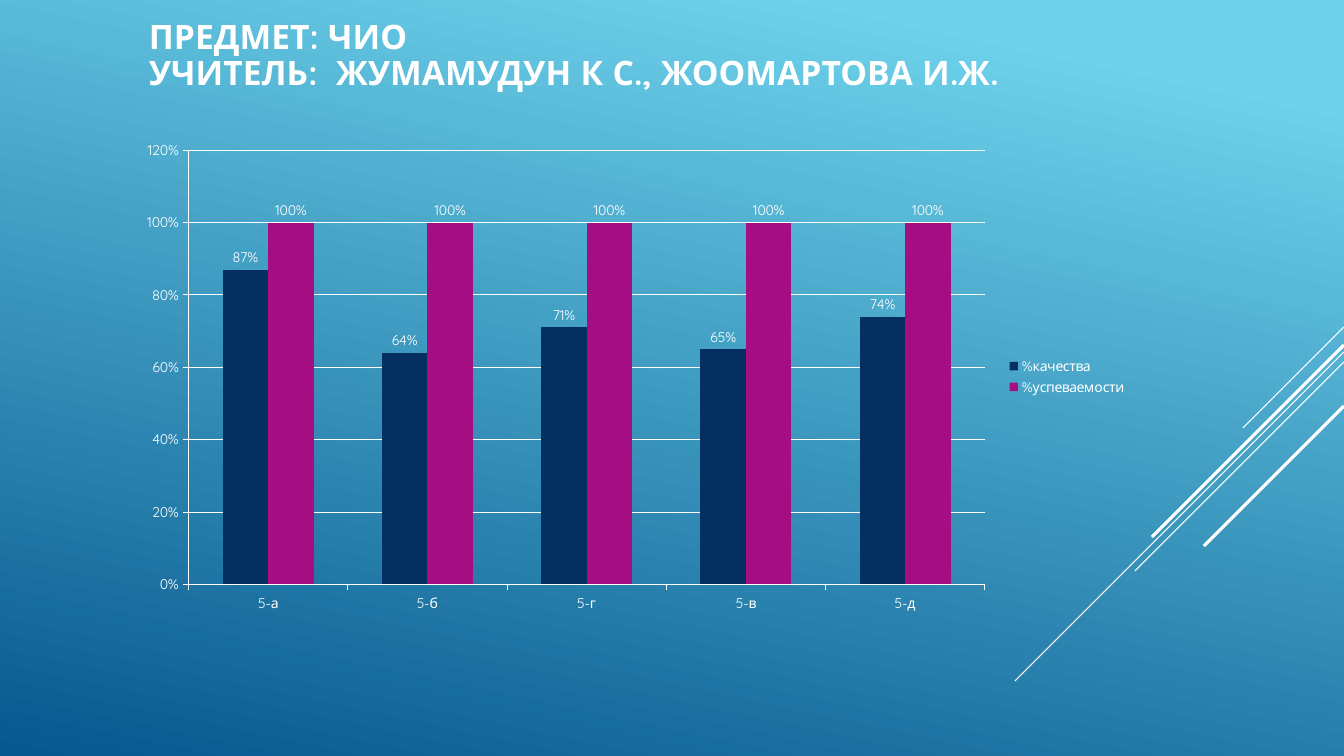
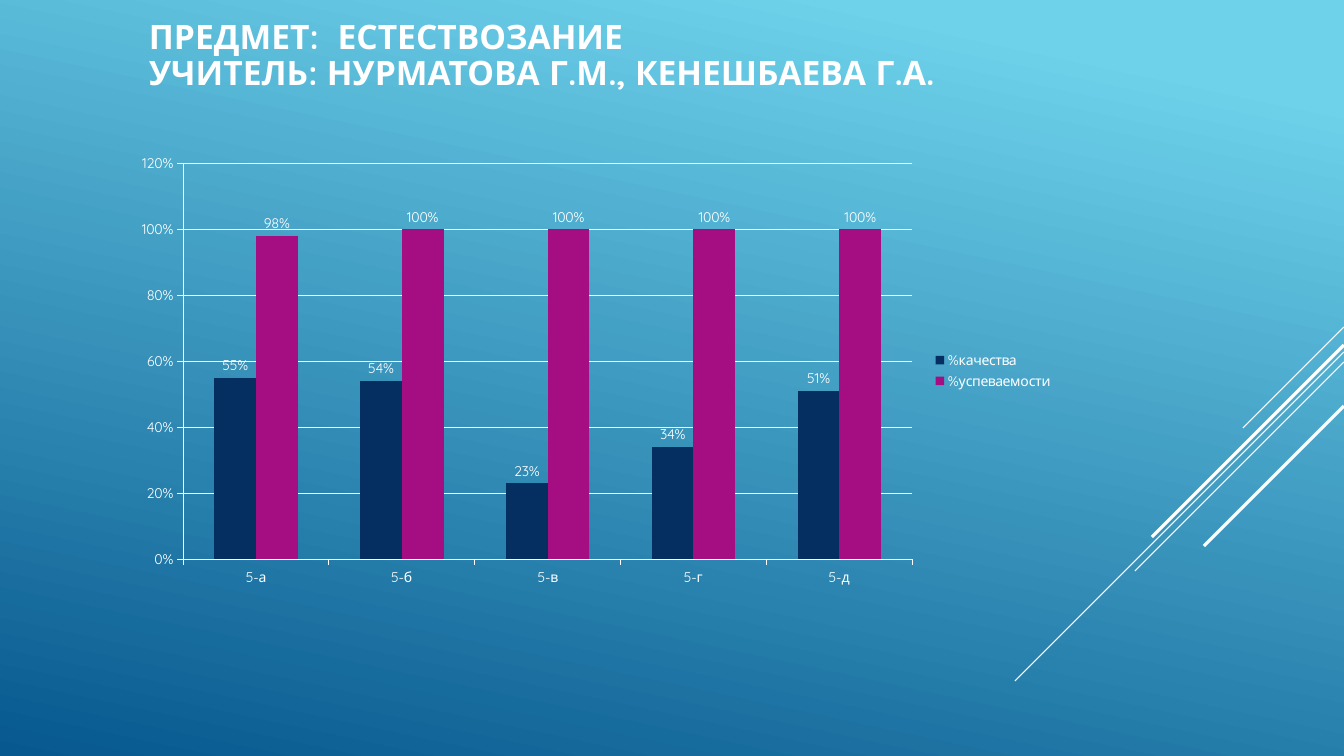
import dataclasses

import lxml.etree
import pptx
import pptx.chart.data
import pptx.dml.color
import pptx.enum.chart
import pptx.enum.shapes
import pptx.enum.text
import pptx.oxml.ns
import pptx.util

PX = 914400 / 100.8
WIDTH, HEIGHT = 1344, 756


@dataclasses.dataclass(frozen=True)
class Theme:
    """Colours, font and type sizes of the deck."""
    font: str = "Quicksand"
    white: str = "FFFFFF"
    sky: str = "6ED2EB"
    sea: str = "06588E"
    quality: str = "052F61"
    progress: str = "A50E82"
    title_size: int = 24
    chart_size: int = 10
    thin: float = 0.75
    thick: float = 2.25


THEME = Theme()
TITLE_BOX = (139, 20, 1168, 82)
DIAGONALS = [
    (327, 101, THEME.thin),
    (352, 329, THEME.thin),
    (362, 209, THEME.thin),
    (345, 192, THEME.thick),
    (406, 140, THEME.thick),
]
SUBJECTS = [
    {
        "title": ["ПРЕДМЕТ: ЧИО",
                  "УЧИТЕЛЬ:  ЖУМАМУДУН К С., ЖООМАРТОВА И.Ж."],
        "box": (127, 132, 1010, 489),
        "classes": ["5-а", "5-б", "5-г", "5-в", "5-д"],
        "quality": [0.87, 0.64, 0.71, 0.65, 0.74],
        "progress": [1, 1, 1, 1, 1],
    },
    {
        "title": ["ПРЕДМЕТ:  ЕСТЕСТВОЗАНИЕ",
                  "УЧИТЕЛЬ: НУРМАТОВА Г.М., КЕНЕШБАЕВА Г.А."],
        "box": (123, 146, 940, 449),
        "classes": ["5-а", "5-б", "5-в", "5-г", "5-д"],
        "quality": [0.55, 0.54, 0.23, 0.34, 0.51],
        "progress": [0.98, 1, 1, 1, 1],
    },
]


def emu(*lengths):
    """Turn px lengths into EMU."""
    return [pptx.util.Emu(round(n * PX)) for n in lengths]


def rgb(code):
    """Return the colour for a hex code."""
    return pptx.dml.color.RGBColor.from_string(code)


def style_font(font, size, bold=False):
    """Set the deck font in white."""
    font.name = THEME.font
    font.size = pptx.util.Pt(size)
    font.bold = bold
    font.color.rgb = rgb(THEME.white)


def style_line(line, width):
    """Make a line solid white."""
    line.color.rgb = rgb(THEME.white)
    line.width = pptx.util.Pt(width)


def set_background(layout):
    """Fill the layout with the slanted blue gradient."""
    fill = layout.background.fill
    fill.gradient()
    fill.gradient_angle = 360 - 102
    stops = [(0.1, THEME.sky), (1, THEME.sea)]
    for stop, (position, code) in zip(fill.gradient_stops, stops):
        stop.position = position
        stop.color.rgb = rgb(code)


def add_diagonal(slide, top, run, width):
    """Draw a 45 degree line down from the right edge."""
    ends = emu(WIDTH, top, WIDTH - run, top + run)
    line = slide.shapes.add_connector(
        pptx.enum.shapes.MSO_CONNECTOR.STRAIGHT, *ends)
    style_line(line.line, width)
    lxml.etree.SubElement(line.element.spPr, pptx.oxml.ns.qn("a:effectLst"))
    return line


def decorate_layout(layout, slide):
    """Give the layout its background and diagonal lines."""
    set_background(layout)
    for ph in list(layout.placeholders):
        layout.shapes.element.remove(ph.element)
    for line in [add_diagonal(slide, *spec) for spec in DIAGONALS]:
        layout.shapes.element.append(line.element)


def add_title(slide, lines):
    """Write the title, one paragraph a line."""
    tf = slide.shapes.add_textbox(*emu(*TITLE_BOX)).text_frame
    tf.word_wrap = True
    tf.vertical_anchor = pptx.enum.text.MSO_ANCHOR.TOP
    tf.margin_top = tf.margin_bottom = 0
    for i, text in enumerate(lines):
        p = tf.add_paragraph() if i else tf.paragraphs[0]
        p.line_spacing = 0.9
        r = p.add_run()
        r.text = text
        style_font(r.font, THEME.title_size, bold=True)


def style_axes(chart):
    """Draw white axes, ticks and gridlines."""
    for axis in (chart.category_axis, chart.value_axis):
        axis.major_tick_mark = pptx.enum.chart.XL_TICK_MARK.OUTSIDE
        axis.minor_tick_mark = pptx.enum.chart.XL_TICK_MARK.NONE
        style_line(axis.format.line, THEME.thin)
    values = chart.value_axis
    values.minimum_scale, values.maximum_scale = 0, 1.2
    values.major_unit = 0.2
    values.has_major_gridlines = True
    style_line(values.major_gridlines.format.line, THEME.thin)
    values.tick_labels.number_format = "0%"
    values.tick_labels.number_format_is_linked = False


def style_series(series, code):
    """Colour a series and label its values."""
    series.format.fill.solid()
    series.format.fill.fore_color.rgb = rgb(code)
    labels = series.data_labels
    labels.show_value = True
    labels.number_format = "0%"
    labels.number_format_is_linked = False
    labels.position = pptx.enum.chart.XL_LABEL_POSITION.OUTSIDE_END
    style_font(labels.font, THEME.chart_size)


def add_results_chart(slide, subject):
    """Add the column chart of quality and progress by class."""
    data = pptx.chart.data.CategoryChartData(number_format="0%")
    data.categories = subject["classes"]
    data.add_series("%качества", subject["quality"])
    data.add_series("%успеваемости", subject["progress"])
    chart = slide.shapes.add_chart(
        pptx.enum.chart.XL_CHART_TYPE.COLUMN_CLUSTERED,
        *emu(*subject["box"]), data).chart
    style_font(chart.font, THEME.chart_size)
    chart.has_title = False
    chart.has_legend = True
    chart.legend.position = pptx.enum.chart.XL_LEGEND_POSITION.RIGHT
    chart.legend.include_in_layout = False
    style_axes(chart)
    plot = chart.plots[0]
    plot.gap_width = 150
    plot.overlap = 0
    plot.vary_by_categories = False
    for series, code in zip(plot.series, (THEME.quality, THEME.progress)):
        style_series(series, code)


def main():
    """Build and save the deck."""
    prs = pptx.Presentation()
    prs.slide_width, prs.slide_height = emu(WIDTH, HEIGHT)
    layout = prs.slide_layouts[6]
    slides = [prs.slides.add_slide(layout) for _ in SUBJECTS]
    decorate_layout(layout, slides[0])
    for slide, subject in zip(slides, SUBJECTS):
        add_title(slide, subject["title"])
        add_results_chart(slide, subject)
    prs.save("out.pptx")


if __name__ == "__main__":
    main()
